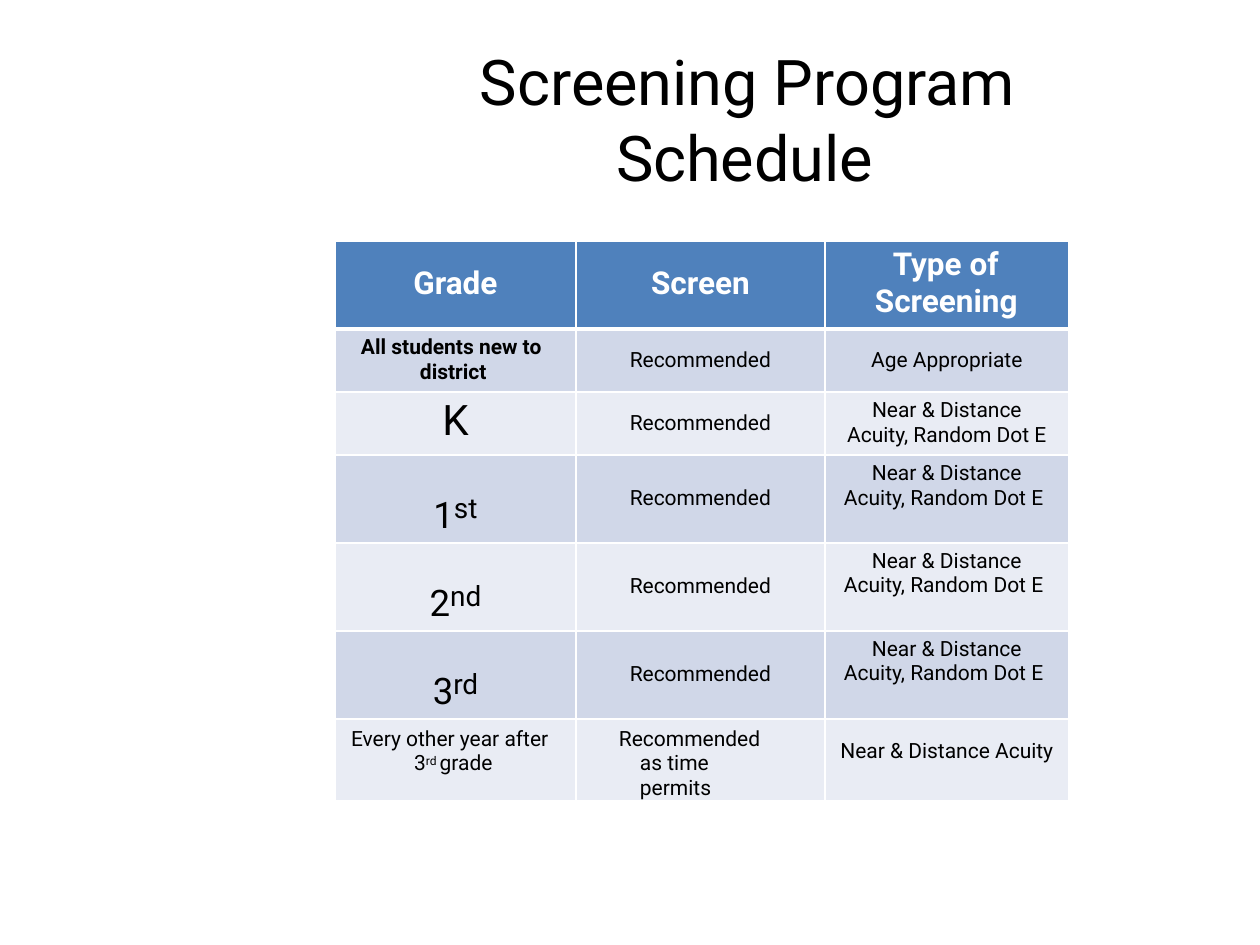
from dataclasses import dataclass

from lxml import etree
from pptx import Presentation
from pptx import util as u
from pptx.dml.color import RGBColor
from pptx.enum import text
from pptx.oxml.ns import qn

FONT = "Roboto"
BLACK, WHITE = "000000", "FFFFFF"
HEADER, BAND_DARK, BAND_LIGHT = "4F81BC", "D0D7E8", "E9ECF4"


@dataclass
class Span:
    words: str
    size: int = 12
    bold: bool = False
    baseline: int = 0  # percent of the text size


@dataclass
class Hang:
    """Left, first-line and right indents of a left-aligned paragraph, in px."""
    left: int
    first: int
    right: int = 0


@dataclass
class Entry:
    lines: list[list[Span]]
    top: int  # inset above the text, in px
    hang: Hang | None = None


def px(length: int) -> u.Emu:
    return u.Emu(round(length * 914400 / 126))


def colour(value: str) -> RGBColor:
    return RGBColor.from_string(value)


def write_text(frame, entry: Entry, ink: str) -> None:
    frame.word_wrap = True
    for index, spans in enumerate(entry.lines):
        para = frame.paragraphs[0] if index == 0 else frame.add_paragraph()
        para.space_before = u.Pt(0)
        para.alignment = text.PP_ALIGN.LEFT if entry.hang else text.PP_ALIGN.CENTER
        if entry.hang:
            props = para._p.get_or_add_pPr()
            props.set("marL", str(px(entry.hang.left)))
            props.set("marR", str(px(entry.hang.right)))
            props.set("indent", str(px(entry.hang.first)))
        for span in spans:
            run = para.add_run()
            run.text = span.words
            run.font.name = FONT
            run.font.size = u.Pt(span.size)
            run.font.bold = span.bold
            run.font.color.rgb = colour(ink)
            if span.baseline:
                run._r.get_or_add_rPr().set("baseline", str(span.baseline * 1000))


def set_border(cell, side: str, points: int) -> None:
    line = etree.SubElement(cell._tc.get_or_add_tcPr(), qn(f"a:ln{side}"), w=str(u.Pt(points)))
    fill = etree.SubElement(line, qn("a:solidFill"))
    etree.SubElement(fill, qn("a:srgbClr"), val=WHITE)


def draw_cell(cell, entry: Entry, row: int) -> None:
    cell.margin_left = cell.margin_right = cell.margin_bottom = 0
    cell.margin_top = px(entry.top)
    cell.vertical_anchor = text.MSO_ANCHOR.TOP
    thick_side = {0: "B", 1: "T"}.get(row)  # rule under the header
    for side in "LRTB":
        set_border(cell, side, 3 if side == thick_side else 1)
    cell.fill.solid()
    cell.fill.fore_color.rgb = colour(HEADER if row == 0 else BAND_DARK if row % 2 else BAND_LIGHT)
    write_text(cell.text_frame, entry, WHITE if row == 0 else BLACK)


def centred(top: int, *lines: str, size: int = 12, bold: bool = False) -> Entry:
    return Entry([[Span(line, size, bold)] for line in lines], top)


def grade_row(number: str, ending: str) -> list[Entry]:
    return [
        Entry([[Span(number, 36, baseline=-16), Span(ending, 16)]], 5),
        centred(31, "Recommended"),
        Entry([[Span("Near & Distance Acuity, Random Dot E")]], 6, Hang(19, 28)),
    ]


ROWS = [
    [centred(24, "Grade", size=18, bold=True),
     centred(24, "Screen", size=18, bold=True),
     Entry([[Span("Type of Screening", 18, True)]], 5, Hang(50, 18))],
    [Entry([[Span("All students new to district", bold=True)]], 6, Hang(85, -59)),
     centred(19, "Recommended"),
     centred(19, "Age Appropriate")],
    [centred(5, "K", size=24),
     centred(19, "Recommended"),
     centred(6, "Near & Distance", "Acuity, Random Dot E")],
    grade_row("1", "st"),
    grade_row("2", "nd"),
    grade_row("3", "rd"),
    [Entry([[Span("Every other year after 3"), Span("rd ", baseline=24), Span("grade")]],
           8, Hang(79, -63, 16)),
     Entry([[Span("Recommended as time permits")]], 8, Hang(64, -21, 53)),
     centred(20, "Near & Distance Acuity")],
]
COLUMN_WIDTHS = [241, 249, 244]
ROW_HEIGHTS = [88, 63, 63, 88, 88, 88, 66]


def draw_title(page) -> None:
    title = page.shapes.title
    title.left, title.top, title.width, title.height = map(px, (430, 9, 641, 231))
    frame = title.text_frame
    frame.auto_size = text.MSO_AUTO_SIZE.NONE
    frame.vertical_anchor = text.MSO_ANCHOR.TOP
    frame.margin_left = frame.margin_right = frame.margin_bottom = 0
    frame.margin_top = px(34)
    write_text(frame, Entry([[Span("Screening Program Schedule", 36)]], 34, Hang(186, -136)), BLACK)


def draw_schedule(page) -> None:
    frame = page.shapes.add_table(len(ROWS), len(COLUMN_WIDTHS), px(335), px(241),
                                  px(sum(COLUMN_WIDTHS)), px(sum(ROW_HEIGHTS)))
    table = frame.table
    table.first_row = table.horz_banding = False
    for column, width in zip(table.columns, COLUMN_WIDTHS):
        column.width = px(width)
    for row, (entries, height) in enumerate(zip(ROWS, ROW_HEIGHTS)):
        table.rows[row].height = px(height)
        for column, entry in enumerate(entries):
            draw_cell(table.cell(row, column), entry, row)


def main() -> None:
    deck = Presentation()
    deck.slide_width, deck.slide_height = u.Inches(10), u.Inches(7.5)
    page = deck.slides.add_slide(deck.slide_layouts[5])
    draw_title(page)
    draw_schedule(page)
    deck.save("out.pptx")


if __name__ == "__main__":
    main()
